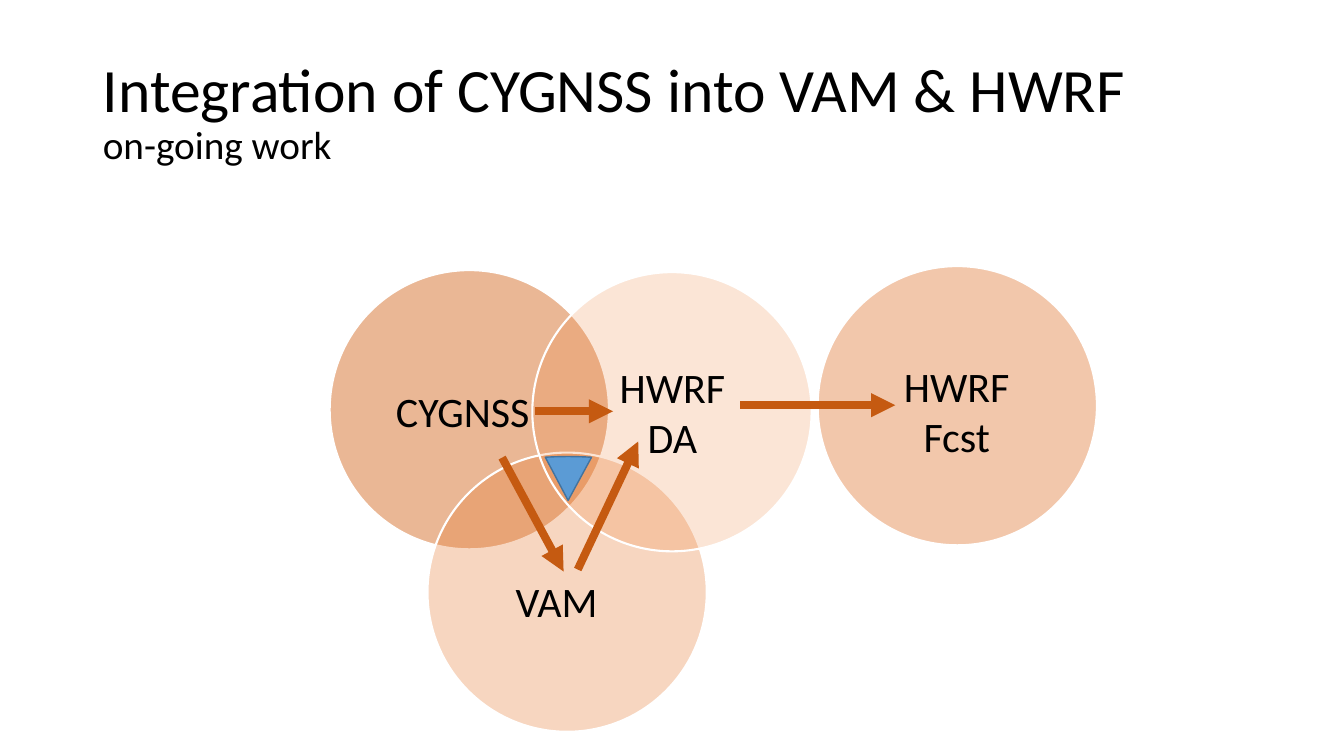
from typing import NamedTuple

from lxml import etree
from pptx import Presentation
from pptx.dml.color import RGBColor
from pptx.enum.shapes import MSO_CONNECTOR, MSO_SHAPE
from pptx.enum.text import MSO_ANCHOR, MSO_AUTO_SIZE, PP_ALIGN
from pptx.oxml.ns import qn
from pptx.util import Inches, Pt

OVAL, PIE = MSO_SHAPE.OVAL, MSO_SHAPE.PIE
STRAIGHT = MSO_CONNECTOR.STRAIGHT
MIDDLE = MSO_ANCHOR.MIDDLE
LEFT, CENTER = PP_ALIGN.LEFT, PP_ALIGN.CENTER
NO_FIT = MSO_AUTO_SIZE.NONE
FONT = "Calibri"
DIAM = 2.77
DEGREE = 0.6  # adjustment units in one degree

COLORS = {
    "text": "000000",
    "rim": "FFFFFF",
    "cygnss": "D7712C",
    "fcst": "DF752E",
    "vam": "E67A30",
    "da": "ED7E32",
    "arrow": "C55A11",
    "wedge": "5B9BD5",
    "edge": "43739E",
}


class Circle(NamedTuple):
    left: float
    top: float
    color: str
    alpha: int


class Label(NamedTuple):
    lines: tuple[str, ...]
    left: float
    top: float
    width: float
    height: float


class Arrow(NamedTuple):
    x1: float
    y1: float
    x2: float
    y2: float


CIRCLES = (
    Circle(3.27, 2.68, "cygnss", 50),
    Circle(8.11, 2.64, "fcst", 40),
    Circle(4.24, 4.49, "vam", 30),
    Circle(5.28, 2.7, "da", 20),
)
LABELS = (
    Label(("HWRF", "DA"), 6.04, 3.53, 1.26, 1.11),
    Label(("CYGNSS",), 3.82, 3.77, 1.54, 0.61),
    Label(("VAM",), 5.01, 5.65, 1.02, 0.61),
    Label(("HWRF", "Fcst"), 8.86, 3.52, 1.26, 1.11),
)
ARROWS = (
    Arrow(5.31, 4.08, 6.08, 4.08),
    Arrow(7.34, 4.02, 8.88, 4.02),
    Arrow(4.98, 4.54, 5.59, 5.67),
    Arrow(5.73, 5.65, 6.33, 4.38),
)


def paint(name: str) -> RGBColor:
    return RGBColor.from_string(COLORS[name])


def write(para, text: str, size: float = 30, align=CENTER) -> None:
    para.alignment = align
    run = para.add_run()
    run.text = text
    run.font.name = FONT
    run.font.size = Pt(size)
    run.font.color.rgb = paint("text")


def add_title(slide) -> None:
    title = slide.shapes.title
    title.left, title.top = Inches(0.92), Inches(0.4)
    title.width, title.height = Inches(11.5), Inches(1.45)
    frame = title.text_frame
    frame.auto_size = NO_FIT
    frame.vertical_anchor = MIDDLE
    para = frame.paragraphs[0]
    para.line_spacing = 0.9
    write(para, "Integration of CYGNSS into VAM & HWRF", size=44, align=LEFT)
    para.add_line_break()
    write(para, "on-going work", size=28, align=LEFT)


def add_form(slide, kind, left: float, top: float, width: float, height: float,
             fill: str, line: str, weight: float):
    form = slide.shapes.add_shape(
        kind, Inches(left), Inches(top), Inches(width), Inches(height))
    form.shadow.inherit = False
    form.fill.solid()
    form.fill.fore_color.rgb = paint(fill)
    form.line.color.rgb = paint(line)
    form.line.width = Pt(weight)
    return form


def add_circle(slide, item: Circle) -> None:
    form = add_form(slide, OVAL, item.left, item.top, DIAM, DIAM,
                    item.color, "rim", 1.5)
    color = form._element.spPr.find(qn("a:solidFill"))[0]
    etree.SubElement(color, qn("a:alpha"), val=str(item.alpha * 1000))


def add_wedge(slide) -> None:
    wedge = add_form(slide, PIE, 4.33, 4.53, 2.61, 0.87, "wedge", "edge", 1)
    wedge.adjustments[0] = 242.14 * DEGREE
    wedge.adjustments[1] = 298.49 * DEGREE


def add_label(slide, item: Label) -> None:
    box = slide.shapes.add_textbox(
        Inches(item.left), Inches(item.top),
        Inches(item.width), Inches(item.height))
    frame = box.text_frame
    frame.word_wrap = False
    frame.vertical_anchor = MIDDLE
    for i, text in enumerate(item.lines):
        write(frame.add_paragraph() if i else frame.paragraphs[0], text)


def add_arrow(slide, item: Arrow) -> None:
    link = slide.shapes.add_connector(STRAIGHT, *map(Inches, item))
    link.line.color.rgb = paint("arrow")
    link.line.width = Pt(5.75)
    etree.SubElement(link.line._get_or_add_ln(), qn("a:tailEnd"),
                     type="triangle")
    etree.SubElement(link._element.spPr, qn("a:effectLst"))


def main() -> None:
    deck = Presentation()
    deck.slide_width, deck.slide_height = Inches(13.33), Inches(7.5)
    slide = deck.slides.add_slide(deck.slide_layouts[5])
    add_title(slide)
    for circle in CIRCLES:
        add_circle(slide, circle)
    add_wedge(slide)
    for label in LABELS:
        add_label(slide, label)
    for arrow in ARROWS:
        add_arrow(slide, arrow)
    deck.save("out.pptx")


if __name__ == "__main__":
    main()
